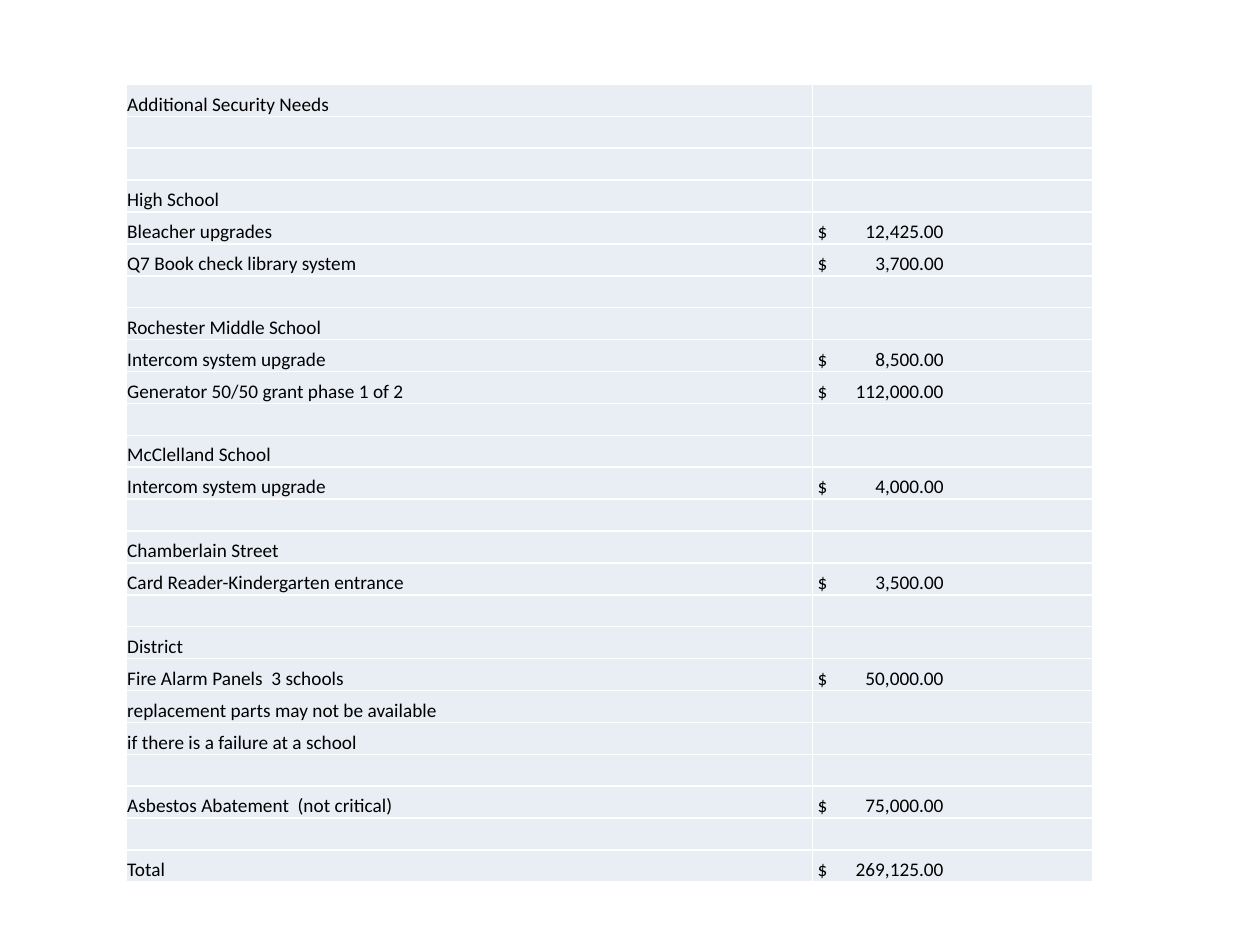
from dataclasses import dataclass

from lxml.etree import SubElement
from pptx import Presentation
from pptx.dml.color import RGBColor
from pptx.enum.text import MSO_VERTICAL_ANCHOR as Anchor
from pptx.oxml import parse_xml
from pptx.oxml.ns import nsdecls, qn
from pptx.table import _Cell as Cell
from pptx.util import Inches, Pt

COLORS = {"band": "E9EDF4", "border": "FFFFFF", "text": "000000"}
FONT = "Calibri"
FONT_SIZE = Pt(11)
BORDER_WIDTH = Pt(1)
COLUMN_WIDTHS = (5.45, 2.22)
TABLE_HEIGHT = 6.33
AMOUNT_TAB = Inches(1)


@dataclass(frozen=True)
class Need:
    label: str = ""
    amount: str = ""


SPACER = Need()
NEEDS = [
    Need("Additional Security Needs"),
    SPACER,
    SPACER,
    Need("High School"),
    Need("Bleacher upgrades", "12,425.00"),
    Need("Q7 Book check library system", "3,700.00"),
    SPACER,
    Need("Rochester Middle School"),
    Need("Intercom system upgrade", "8,500.00"),
    Need("Generator 50/50 grant phase 1 of 2", "112,000.00"),
    SPACER,
    Need("McClelland School"),
    Need("Intercom system upgrade", "4,000.00"),
    SPACER,
    Need("Chamberlain Street"),
    Need("Card Reader-Kindergarten entrance", "3,500.00"),
    SPACER,
    Need("District"),
    Need("Fire Alarm Panels  3 schools", "50,000.00"),
    Need("replacement parts may not be available"),
    Need("if there is a failure at a school"),
    SPACER,
    Need("Asbestos Abatement  (not critical)", "75,000.00"),
    SPACER,
    Need("Total", "269,125.00"),
]


def add_borders(cell: Cell) -> None:
    properties = cell._tc.get_or_add_tcPr()
    for position, side in enumerate(("lnL", "lnR", "lnT", "lnB")):
        border = parse_xml(
            f'<a:{side} {nsdecls("a")} w="{BORDER_WIDTH}"><a:solidFill>'
            f'<a:srgbClr val="{COLORS["border"]}"/></a:solidFill></a:{side}>'
        )
        properties.insert(position, border)


def fill_cell(cell: Cell, text: str, left_margin: float) -> None:
    cell.fill.solid()
    cell.fill.fore_color.rgb = RGBColor.from_string(COLORS["band"])
    cell.vertical_anchor = Anchor.BOTTOM
    cell.margin_left = Inches(left_margin)
    cell.margin_top = cell.margin_right = Inches(0.01)
    cell.margin_bottom = 0
    add_borders(cell)
    paragraph = cell.text_frame.paragraphs[0]
    paragraph.text = text
    for run in paragraph.runs:
        run.font.name = FONT
        run.font.size = FONT_SIZE
        run.font.color.rgb = RGBColor.from_string(COLORS["text"])
    SubElement(paragraph._p, qn("a:endParaRPr"), sz=str(int(FONT_SIZE.pt * 100)))


def fill_amount(cell: Cell, amount: str) -> None:
    fill_cell(cell, f"$\t{amount}" if amount else "", 0.04)
    if amount:
        properties = cell.text_frame.paragraphs[0]._p.get_or_add_pPr()
        stops = SubElement(properties, qn("a:tabLst"))
        SubElement(stops, qn("a:tab"), pos=str(AMOUNT_TAB), algn="r")


def main() -> None:
    deck = Presentation()
    deck.slide_width, deck.slide_height = Inches(10), Inches(7.5)
    slide = deck.slides.add_slide(deck.slide_layouts[6])
    needs_table = slide.shapes.add_table(
        len(NEEDS), len(COLUMN_WIDTHS), Inches(1), Inches(0.67),
        Inches(sum(COLUMN_WIDTHS)), Inches(TABLE_HEIGHT),
    ).table
    needs_table.first_row = needs_table.horz_banding = False
    for column, width in zip(needs_table.columns, COLUMN_WIDTHS):
        column.width = Inches(width)
    for row, need in zip(needs_table.rows, NEEDS):
        row.height = Inches(TABLE_HEIGHT / len(NEEDS))
        label_cell, amount_cell = row.cells
        fill_cell(label_cell, need.label, 0.01)
        fill_amount(amount_cell, need.amount)
    deck.save("out.pptx")


if __name__ == "__main__":
    main()
